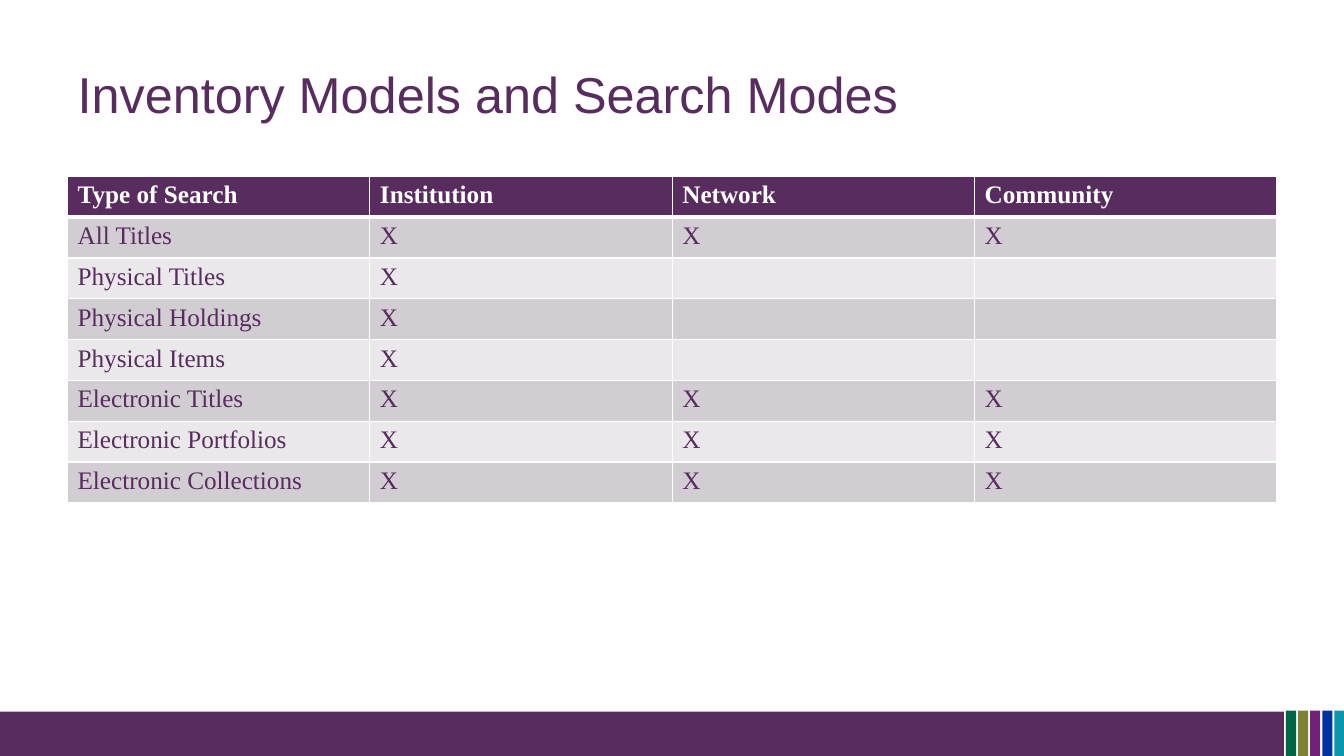
from dataclasses import dataclass
from typing import Any

from lxml import etree
from pptx import Presentation
from pptx import util as u
from pptx.dml import color
from pptx.enum import shapes, text
from pptx.oxml import ns

EMU_PER_PX = 4572


@dataclass(frozen=True)
class Theme:
    purple: str = "592C5F"
    white: str = "FFFFFF"
    bands: tuple[str, ...] = ("D1CDD2", "EAE8EA")
    stripes: tuple[str, ...] = ("006647", "7E8034", "712177", "0033A0", "0996A9")
    title_font: str = "Arial"
    table_font: str = "Times New Roman"
    title_size: int = 36
    table_size: int = 18
    thin_line: int = 1
    thick_line: int = 3


@dataclass(frozen=True)
class Box:
    left: int
    top: int
    width: int
    height: int

    def emu(self) -> tuple[int, ...]:
        return tuple(px(n) for n in (self.left, self.top, self.width, self.height))


@dataclass(frozen=True)
class Block:
    box: Box
    fill: str


@dataclass(frozen=True)
class SearchType:
    name: str
    scopes: tuple[str, ...]


THEME = Theme()
SLIDE_WIDTH, SLIDE_HEIGHT = 2667, 1500
TITLE = "Inventory Models and Search Modes"
TITLE_BOX = Box(134, 60, 2400, 250)
SCOPES = ("Institution", "Network", "Community")
SEARCH_TYPES = (
    SearchType("All Titles", SCOPES),
    SearchType("Physical Titles", SCOPES[:1]),
    SearchType("Physical Holdings", SCOPES[:1]),
    SearchType("Physical Items", SCOPES[:1]),
    SearchType("Electronic Titles", SCOPES),
    SearchType("Electronic Portfolios", SCOPES),
    SearchType("Electronic Collections", SCOPES),
)
ROW_HEIGHT = 81
TABLE_BOX = Box(134, 350, 2400, ROW_HEIGHT * (len(SEARCH_TYPES) + 1))
STRIPE_LEFT, STRIPE_PITCH, STRIPE_WIDTH = 2552, 24, 20
FOOTER = (
    Block(Box(0, 1412, 2548, 90), THEME.purple),
    *(
        Block(Box(STRIPE_LEFT + i * STRIPE_PITCH, 1410, STRIPE_WIDTH, 90), fill)
        for i, fill in enumerate(THEME.stripes)
    ),
)


def px(length: int) -> int:
    return u.Emu(length * EMU_PER_PX)


def apply(target: Any, values: dict[str, Any]) -> None:
    for name, value in values.items():
        setattr(target, name, value)


def style_text(para: Any, font: str, size: int, fill: str, bold: bool = False) -> None:
    para.alignment = text.PP_ALIGN.LEFT
    apply(para.font, {"name": font, "size": u.Pt(size), "bold": bold})
    para.font.color.rgb = color.RGBColor.from_string(fill)


def add_block(page: Any, block: Block) -> None:
    shape = page.shapes.add_shape(shapes.MSO_SHAPE.RECTANGLE, *block.box.emu())
    shape.shadow.inherit = False
    shape.fill.solid()
    shape.fill.fore_color.rgb = color.RGBColor.from_string(block.fill)
    shape.line.fill.background()


def add_title(page: Any) -> None:
    title = page.shapes.title
    apply(title, dict(zip(("left", "top", "width", "height"), TITLE_BOX.emu())))
    frame = title.text_frame
    frame.text = TITLE
    apply(frame, {
        "word_wrap": True,
        "auto_size": text.MSO_AUTO_SIZE.NONE,
        "vertical_anchor": text.MSO_ANCHOR.MIDDLE,
    })
    style_text(frame.paragraphs[0], THEME.title_font, THEME.title_size, THEME.purple)


def add_border(cell: Any, side: str, points: int) -> None:
    properties = cell._tc.get_or_add_tcPr()
    line = etree.SubElement(properties, ns.qn(f"a:ln{side}"), w=str(u.Pt(points)))
    fill = etree.SubElement(line, ns.qn("a:solidFill"))
    etree.SubElement(fill, ns.qn("a:srgbClr"), val=THEME.white)


def format_cell(cell: Any, row: int, label: str) -> None:
    header = row == 0
    borders = {
        "L": THEME.thin_line,
        "R": THEME.thin_line,
        "T": THEME.thick_line if row == 1 else THEME.thin_line,
        "B": THEME.thick_line if header else THEME.thin_line,
    }
    for side, points in borders.items():
        add_border(cell, side, points)
    fill = THEME.purple if header else THEME.bands[(row - 1) % len(THEME.bands)]
    cell.fill.solid()
    cell.fill.fore_color.rgb = color.RGBColor.from_string(fill)
    cell.text = label
    ink = THEME.white if header else THEME.purple
    style_text(cell.text_frame.paragraphs[0], THEME.table_font, THEME.table_size, ink, header)


def add_search_table(page: Any) -> None:
    rows = [("Type of Search", *SCOPES)]
    for kind in SEARCH_TYPES:
        rows.append((kind.name, *("X" if scope in kind.scopes else "" for scope in SCOPES)))
    table = page.shapes.add_table(len(rows), len(rows[0]), *TABLE_BOX.emu()).table
    for row, labels in enumerate(rows):
        for column, label in enumerate(labels):
            format_cell(table.cell(row, column), row, label)


def main() -> None:
    deck = Presentation()
    apply(deck, {"slide_width": px(SLIDE_WIDTH), "slide_height": px(SLIDE_HEIGHT)})
    page = deck.slides.add_slide(deck.slide_layouts.get_by_name("Title Only"))
    for block in FOOTER:
        add_block(page, block)
    add_title(page)
    add_search_table(page)
    deck.save("out.pptx")


if __name__ == "__main__":
    main()
